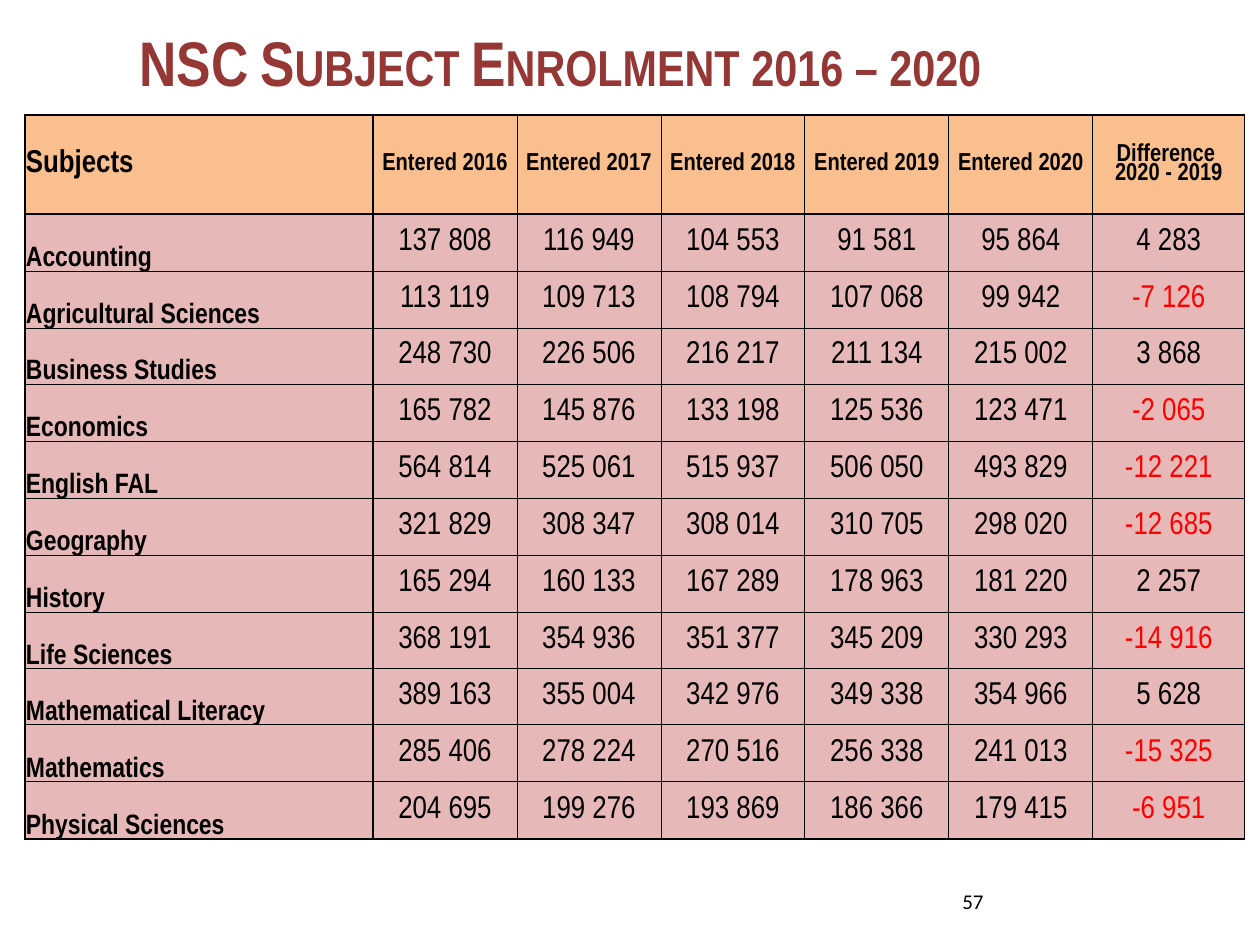
"""Build the slide with the table of NSC subject enrolment from 2016 to 2020."""
from lxml.etree import SubElement
from pptx import Presentation
from pptx.dml.color import RGBColor
from pptx.enum.text import MSO_ANCHOR, PP_ALIGN
from pptx.oxml.ns import qn
from pptx.util import Emu, Pt

PX = 914400 // 126
COLORS = {"title": "953735", "header": "FABF8F", "body": "E6B9B8",
          "text": "000000", "loss": "FF0000", "border": "000000"}
HEADERS = ["Subjects", *(f"Entered {year}" for year in range(2016, 2021)),
           "Difference \v2020 - 2019"]
ROWS = [
    ["Accounting", "137 808", "116 949", "104 553", "91 581", "95 864", "4 283"],
    ["Agricultural Sciences", "113 119", "109 713", "108 794", "107 068", "99 942", "-7 126"],
    ["Business Studies", "248 730", "226 506", "216 217", "211 134", "215 002", "3 868"],
    ["Economics", "165 782", "145 876", "133 198", "125 536", "123 471", "-2 065"],
    ["English FAL", "564 814", "525 061", "515 937", "506 050", "493 829", "-12 221"],
    ["Geography", "321 829", "308 347", "308 014", "310 705", "298 020", "-12 685"],
    ["History", "165 294", "160 133", "167 289", "178 963", "181 220", "2 257"],
    ["Life Sciences", "368 191", "354 936", "351 377", "345 209", "330 293", "-14 916"],
    ["Mathematical Literacy", "389 163", "355 004", "342 976", "349 338", "354 966", "5 628"],
    ["Mathematics", "285 406", "278 224", "270 516", "256 338", "241 013", "-15 325"],
    ["Physical Sciences", "204 695", "199 276", "193 869", "186 366", "179 415", "-6 951"],
]
COL_WIDTHS = [348] + [144] * 5 + [152]
HEADER_H, BODY_H = 99, 625


def style(p, size, color, bold, align, name="Arial Narrow"):
    p.alignment = align
    p.font.size = Pt(size)
    p.font.bold = bold
    p.font.name = name
    p.font.color.rgb = RGBColor.from_string(COLORS[color])


def add_border(cell, side, width):
    ln = SubElement(cell._tc.get_or_add_tcPr(), qn(f"a:ln{side}"), w=str(Pt(width)))
    fill = SubElement(ln, qn("a:solidFill"))
    SubElement(fill, qn("a:srgbClr"), val=COLORS["border"])


prs = Presentation()
prs.slide_width, prs.slide_height = Emu(1260 * PX), Emu(945 * PX)
s = prs.slides.add_slide(prs.slide_layouts[6])

labels = [
    ("NSC Subject Enrolment 2016 – 2020", (-5, 16, 1131, 90),
     (36, "title", True, PP_ALIGN.CENTER)),
    ("57", (927, 869, 69, 64), (12, "text", False, PP_ALIGN.RIGHT, "Calibri")),
]
for text, box, look in labels:
    tf = s.shapes.add_textbox(*(Emu(v * PX) for v in box)).text_frame
    tf.word_wrap = True
    tf.vertical_anchor = MSO_ANCHOR.MIDDLE
    p = tf.paragraphs[0]
    r = p.add_run()
    r.text = text
    style(p, *look)
    if look[1] == "title":
        r.font._element.set("cap", "small")

last = len(ROWS)
frame = s.shapes.add_table(last + 1, len(HEADERS), Emu(25 * PX), Emu(115 * PX),
                           Emu(sum(COL_WIDTHS) * PX), Emu((HEADER_H + BODY_H) * PX))
table = frame.table
for col, width in zip(table.columns, COL_WIDTHS):
    col.width = Emu(width * PX)
edges = [0] + [HEADER_H + round(i * BODY_H / last) for i in range(last + 1)]
for row, top, bottom in zip(table.rows, edges, edges[1:]):
    row.height = Emu((bottom - top) * PX)

for i, values in enumerate([HEADERS, *ROWS]):
    for j, value in enumerate(values):
        cell = table.cell(i, j)
        thick = {"L": j < 2, "R": j == 0, "T": i < 2, "B": i in (0, last)}
        for side, is_thick in thick.items():
            add_border(cell, side, 1 if is_thick else 0.5)
        cell.fill.solid()
        cell.fill.fore_color.rgb = RGBColor.from_string(COLORS["body" if i else "header"])
        cell.margin_left = cell.margin_right = cell.margin_top = Emu(PX)
        cell.margin_bottom = 0
        subject = i > 0 and j == 0
        cell.vertical_anchor = MSO_ANCHOR.BOTTOM if subject else MSO_ANCHOR.MIDDLE
        cell.text_frame.text = value
        p = cell.text_frame.paragraphs[0]
        p.line_spacing = 0.82
        size = 16 if subject else 14 if i == 0 and j > 0 else 18
        style(p, size, "loss" if value.startswith("-") else "text", i == 0 or j == 0,
              PP_ALIGN.CENTER if j else PP_ALIGN.LEFT)

prs.save("out.pptx")
